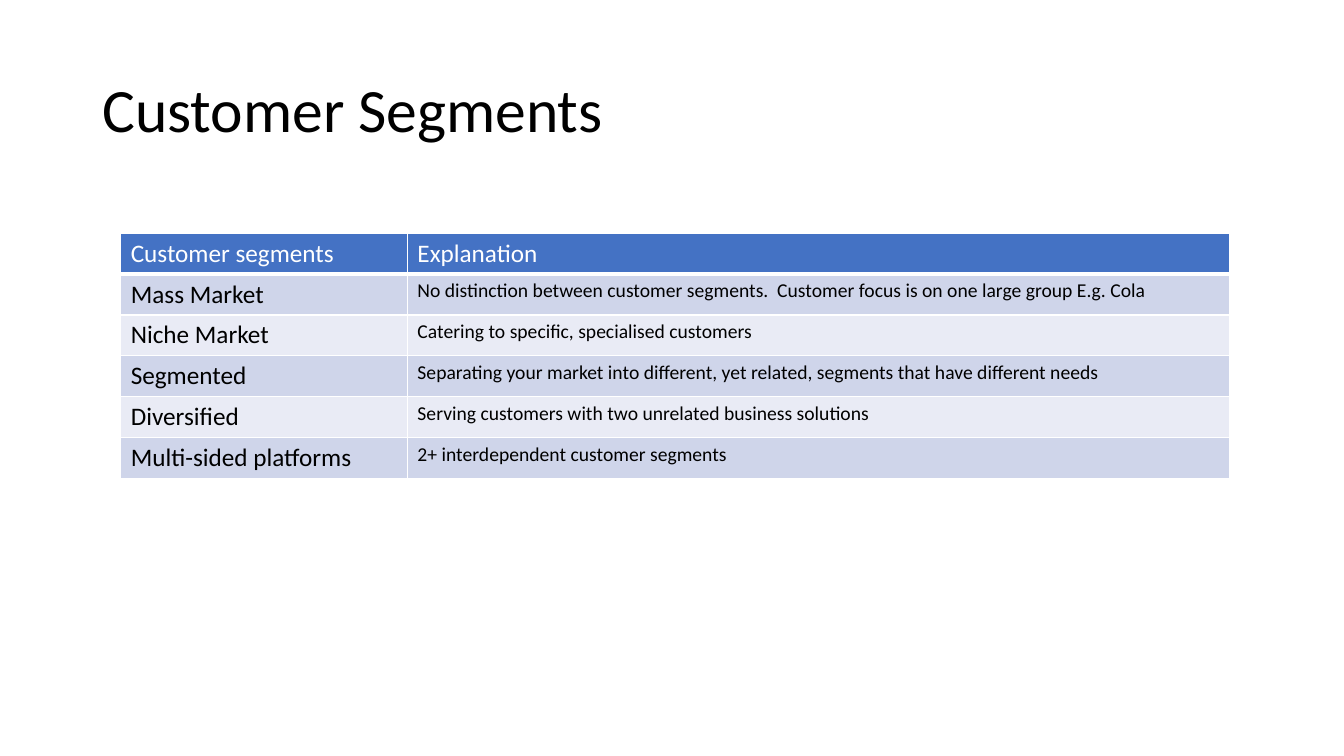
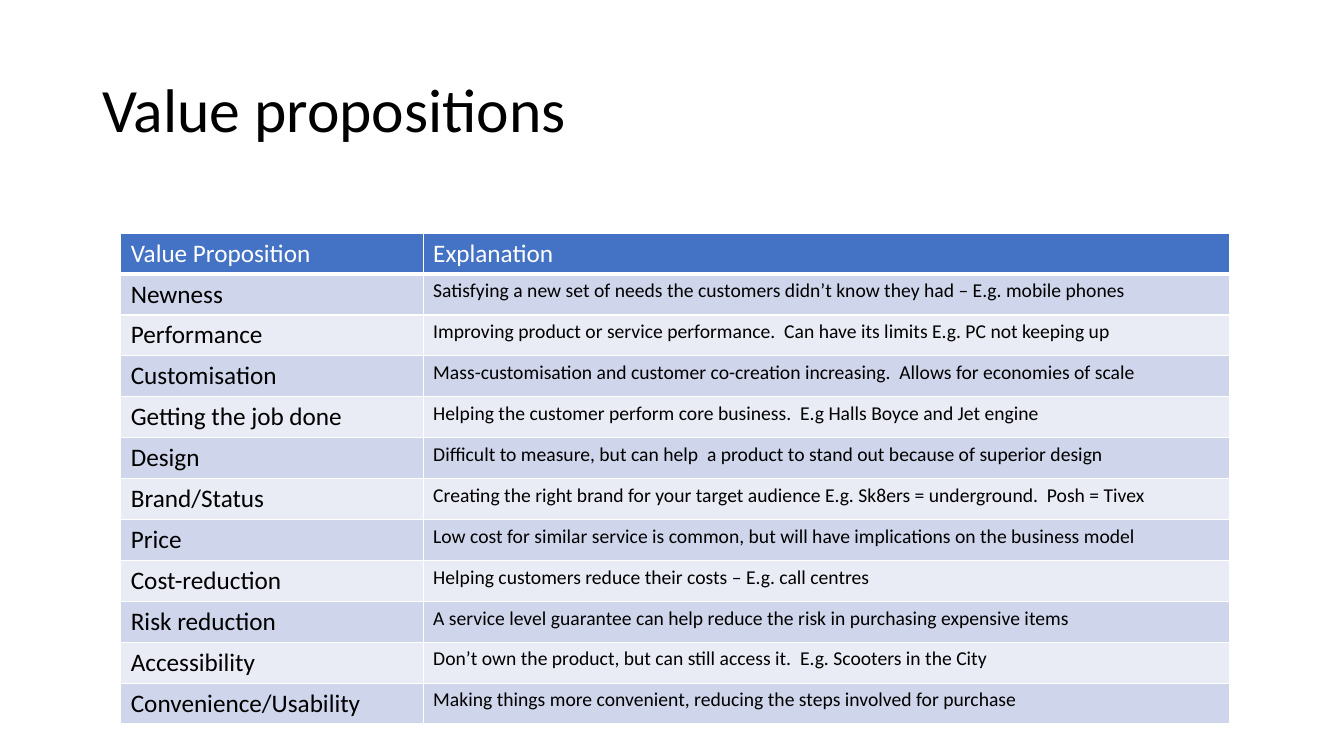
from lxml import etree
from pptx import Presentation
from pptx.dml.color import RGBColor
from pptx.enum import text
from pptx.oxml.ns import qn
from pptx.util import Emu, Pt

# Shared style
PX = 9525
FONT = "Calibri"
BLACK, WHITE, BLUE = "000000", "FFFFFF", "4472C4"
BANDS = ["CFD5EA", "E9EBF5"]
TITLE = (88, 38, 1104, 139)
GRID = (115, 222, 1056)
ROW = 39

SEGMENTS = [
    ("Customer segments", "Explanation"),
    ("Mass Market", "No distinction between customer segments.  Customer focus is on one large group E.g. Cola"),
    ("Niche Market", "Catering to specific, specialised customers"),
    ("Segmented", "Separating your market into different, yet related, segments that have different needs"),
    ("Diversified", "Serving customers with two unrelated business solutions"),
    ("Multi-sided platforms", "2+ interdependent customer segments"),
]
VALUES = [
    ("Value Proposition", "Explanation"),
    ("Newness", "Satisfying a new set of needs the customers didn’t know they had – E.g. mobile phones"),
    ("Performance", "Improving product or service performance.  Can have its limits E.g. PC not keeping up"),
    ("Customisation", "Mass-customisation and customer co-creation increasing.  Allows for economies of scale"),
    ("Getting the job done", "Helping the customer perform core business.  E.g Halls Boyce and Jet engine"),
    ("Design", "Difficult to measure, but can help  a product to stand out because of superior design"),
    ("Brand/Status", "Creating the right brand for your target audience E.g. Sk8ers = underground.  Posh = Tivex"),
    ("Price", "Low cost for similar service is common, but will have implications on the business model"),
    ("Cost-reduction", "Helping customers reduce their costs – E.g. call centres"),
    ("Risk reduction", "A service level guarantee can help reduce the risk in purchasing expensive items"),
    ("Accessibility", "Don’t own the product, but can still access it.  E.g. Scooters in the City"),
    ("Convenience/Usability", "Making things more convenient, reducing the steps involved for purchase"),
]


def px(n):
    return Emu(n * PX)


def paint(target, color):
    """Give a fill one solid colour."""
    target.solid()
    target.fore_color.rgb = RGBColor.from_string(color)


def add_run(para, words, size, color):
    run = para.add_run()
    run.text = words
    run.font.name = FONT
    run.font.size = Pt(size)
    run.font.bold = False
    paint(run.font.fill, color)


def add_edges(cell, foot):
    """Draw white cell borders; foot is the bottom width in points."""
    props = cell._tc.get_or_add_tcPr()
    for side, width in (("L", 1), ("R", 1), ("T", 1), ("B", foot)):
        line = etree.SubElement(props, qn("a:ln" + side), w=str(Pt(width)))
        fill = etree.SubElement(line, qn("a:solidFill"))
        etree.SubElement(fill, qn("a:srgbClr"), val=WHITE)


def add_title(slide, box, words):
    frame = slide.shapes.add_textbox(*map(px, box)).text_frame
    frame.word_wrap = True
    frame.vertical_anchor = text.MSO_ANCHOR.MIDDLE
    para = frame.paragraphs[0]
    para.line_spacing = 0.9
    add_run(para, words, 44, BLACK)


def add_grid(slide, box, first, rows):
    """Place a two-column table; first is the width of its left column."""
    left, top, width = box
    shape = slide.shapes.add_table(len(rows), 2, px(left), px(top),
                                   px(width), px(ROW * len(rows)))
    table = shape.table
    for col, wide in zip(table.columns, (first, width - first)):
        col.width = px(wide)
    for r, row in enumerate(rows):
        head = r == 0
        for c, words in enumerate(row):
            cell = table.cell(r, c)
            add_edges(cell, 3 if head else 1)
            paint(cell.fill, BLUE if head else BANDS[(r - 1) % 2])
            add_run(cell.text_frame.paragraphs[0], words,
                    18 if head or c == 0 else 14, WHITE if head else BLACK)


def add_page(deck, title, first, rows):
    slide = deck.slides.add_slide(deck.slide_layouts[6])
    paint(slide.background.fill, WHITE)
    add_title(slide, TITLE, title)
    add_grid(slide, GRID, first, rows)


def main():
    deck = Presentation()
    deck.slide_width, deck.slide_height = px(1280), px(720)
    add_page(deck, "Customer Segments", 273, SEGMENTS)
    add_page(deck, "Value propositions", 288, VALUES)
    deck.save("out.pptx")


if __name__ == "__main__":
    main()
